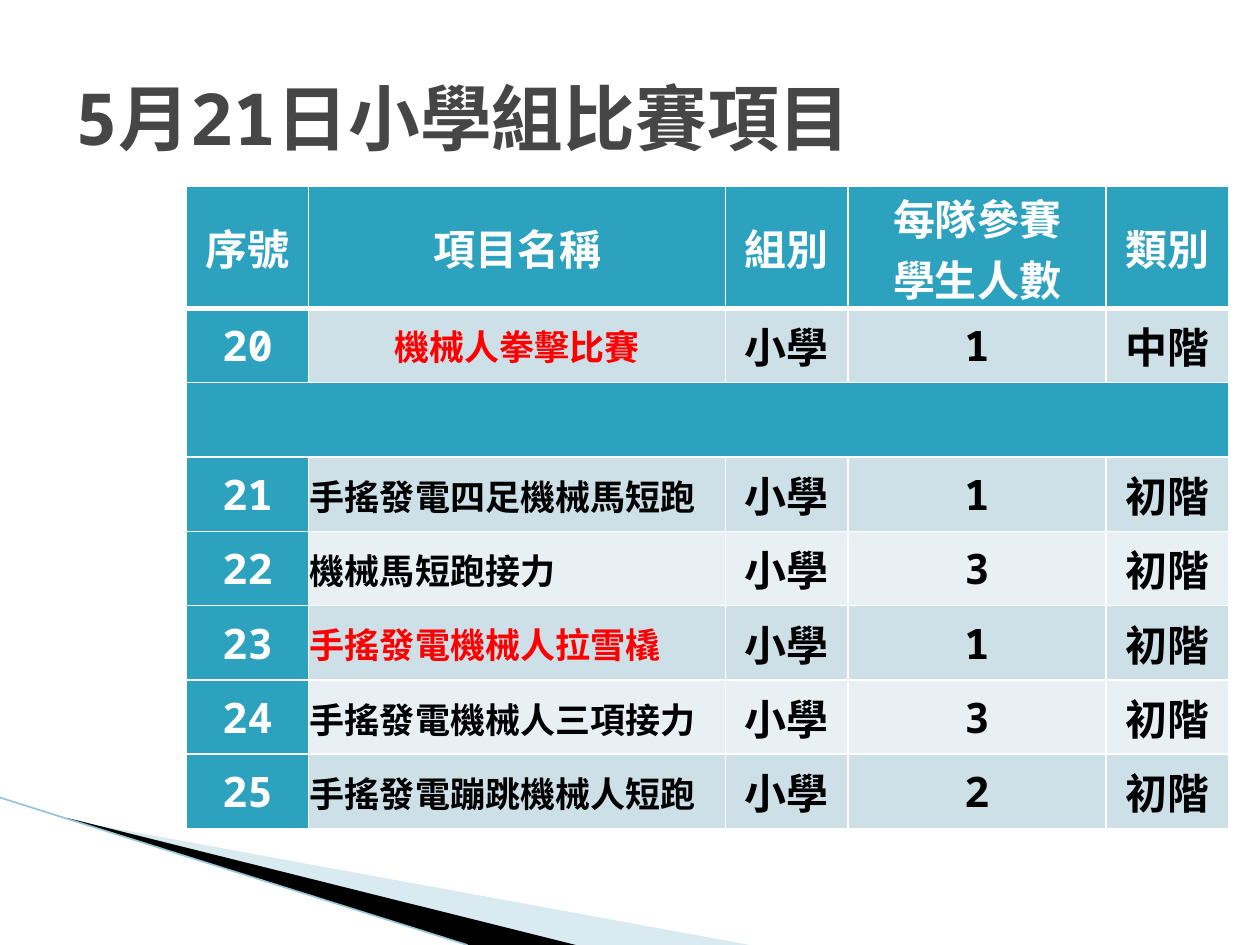
from pptx import Presentation
from pptx.dml.color import RGBColor
from pptx.enum.shapes import MSO_CONNECTOR
from pptx.enum.text import MSO_ANCHOR, PP_ALIGN
from pptx.util import Inches, Pt
from lxml.etree import SubElement
from pptx.oxml import parse_xml
from pptx.oxml.ns import nsdecls, qn

COLORS = {
    "white": "FFFFFF", "black": "000000", "red": "FF0000", "title": "464646",
    "teal": "2DA2BF", "band_dark": "CDE0E8", "band_light": "E8F0F4",
    "wedge": "A0CBDC", "edge": "97C5D8",
}
MONO, CJK = "Noto Sans Mono", "Noto Sans CJK TC"

COL_WIDTHS = [0.97, 3.31, 0.97, 2.05, 0.97]
HEADER_HEIGHT, ROW_HEIGHT = 0.86, 0.59
HEADERS = ["序號", "項目名稱", "組別", "每隊參賽\n學生人數", "類別"]
# Number, event, team size, level, highlighted; None is the divider row
EVENTS = [
    ("20", "機械人拳擊比賽", "1", "中階", True),
    None,
    ("21", "手搖發電四足機械馬短跑", "1", "初階", False),
    ("22", "機械馬短跑接力", "3", "初階", False),
    ("23", "手搖發電機械人拉雪橇", "1", "初階", True),
    ("24", "手搖發電機械人三項接力", "3", "初階", False),
    ("25", "手搖發電蹦跳機械人短跑", "2", "初階", False),
]


def rgb(name):
    return RGBColor.from_string(COLORS[name])


def add_text(tf, text, color, size=24, font=MONO, align=PP_ALIGN.CENTER, before=0):
    for i, line in enumerate(text.split("\n")):
        p = tf.paragraphs[0] if i == 0 else tf.add_paragraph()
        p.alignment, p.space_before = align, Pt(before)
        r = p.add_run()
        r.text = line
        for key, value in {"name": font, "size": Pt(size), "bold": True}.items():
            setattr(r.font, key, value)
        r.font.color.rgb = rgb(color)
        SubElement(r.font._element, qn("a:ea"), typeface=CJK)


def add_wedge(s, points, color, opacity=100):
    start, *rest = [(Inches(x), Inches(y)) for x, y in points]
    builder = s.shapes.build_freeform(*start)
    builder.add_line_segments(rest, close=True)
    sp = builder.convert_to_shape()
    sp.shadow.inherit = False
    sp.fill.solid()
    sp.fill.fore_color.rgb = rgb(color)
    sp.line.fill.background()
    if opacity < 100:
        clr = sp.fill._xPr.find(f".//{qn('a:srgbClr')}")
        SubElement(clr, qn("a:alpha"), val=str(opacity * 1000))


def add_edge(s, start, end):
    line = s.shapes.add_connector(MSO_CONNECTOR.STRAIGHT,
                                  *[Inches(v) for v in start + end])
    line.line.color.rgb = rgb("edge")
    line.line.width = Pt(0.95)
    SubElement(line._element.spPr, qn("a:effectLst"))


def set_borders(cell, bottom=1):
    tc_pr = cell._tc.get_or_add_tcPr()
    for i, (side, width) in enumerate(zip("LRTB", (1, 1, 1, bottom))):
        tc_pr.insert(i, parse_xml(
            f'<a:ln{side} {nsdecls("a")} w="{Pt(width)}"><a:solidFill>'
            f'<a:srgbClr val="{COLORS["white"]}"/></a:solidFill></a:ln{side}>'))


def style_cell(cell, fill, side=0.07, top=0, bottom_border=1):
    layout = {"margin_left": Inches(side), "margin_right": Inches(side),
              "margin_top": Inches(top), "margin_bottom": 0,
              "vertical_anchor": MSO_ANCHOR.MIDDLE}
    for key, value in layout.items():
        setattr(cell, key, value)
    cell.fill.solid()
    cell.fill.fore_color.rgb = rgb(fill)
    set_borders(cell, bottom_border)


def fill_event(cells, event, band, centered):
    number, name, size, level, highlighted = event
    for col, text in enumerate([number, name, "小學", size, level]):
        cell = cells[col]
        if col == 1:
            color = "red" if highlighted else "black"
            if centered:
                style_cell(cell, band)
                add_text(cell.text_frame, text, color, 20, CJK, before=3)
            else:
                style_cell(cell, band, 0.01, 0.01)
                add_text(cell.text_frame, text, color, 20, CJK, PP_ALIGN.LEFT)
        else:
            style_cell(cell, band if col else "teal")
            add_text(cell.text_frame, text, "black" if col else "white", before=3)


def add_event_table(s):
    n_rows = len(EVENTS) + 1
    frame = s.shapes.add_table(
        n_rows, len(COL_WIDTHS), Inches(1.48), Inches(1.48),
        Inches(sum(COL_WIDTHS)), Inches(HEADER_HEIGHT + ROW_HEIGHT * len(EVENTS)))
    table = frame.table
    for col, width in zip(table.columns, COL_WIDTHS):
        col.width = Inches(width)
    for i, row in enumerate(table.rows):
        row.height = Inches(ROW_HEIGHT if i else HEADER_HEIGHT)

    for cell, text in zip(table.rows[0].cells, HEADERS):
        style_cell(cell, "teal", 0.02, bottom_border=3)
        add_text(cell.text_frame, text, "white")

    for i, event in enumerate(EVENTS, start=1):
        cells = list(table.rows[i].cells)
        if event is None:
            for cell in cells:
                style_cell(cell, "teal")
            cells[0].merge(cells[-1])
        else:
            band = "band_dark" if i % 2 else "band_light"
            fill_event(cells, event, band, centered=i == 1)


def add_title(s, text):
    title = s.shapes.title
    box = {"left": 0.5, "top": 0.3, "width": 9, "height": 1.25}
    for key, value in box.items():
        setattr(title, key, Inches(value))
    tf = title.text_frame
    tf.word_wrap = True
    tf.vertical_anchor = MSO_ANCHOR.MIDDLE
    add_text(tf, text, "title", 41, align=PP_ALIGN.LEFT)
    # Bring the title in front of the table
    s.shapes.element.append(title.element)


def main():
    prs = Presentation()
    prs.slide_width, prs.slide_height = Inches(10), Inches(7.5)
    s = prs.slides.add_slide(prs.slide_layouts[5])

    # Corner decoration
    add_wedge(s, [(0.55, 6.51), (5.95, 7.5), (4.56, 7.5), (0.55, 6.5)], "wedge", 40)
    add_wedge(s, [(0.53, 6.49), (4.57, 7.5), (3.72, 7.5), (0.54, 6.5)], "black")
    add_edge(s, (0, 6.33), (3.71, 7.5))

    # Content
    add_event_table(s)
    add_title(s, "5月21日小學組比賽項目")
    prs.save("out.pptx")


if __name__ == "__main__":
    main()
